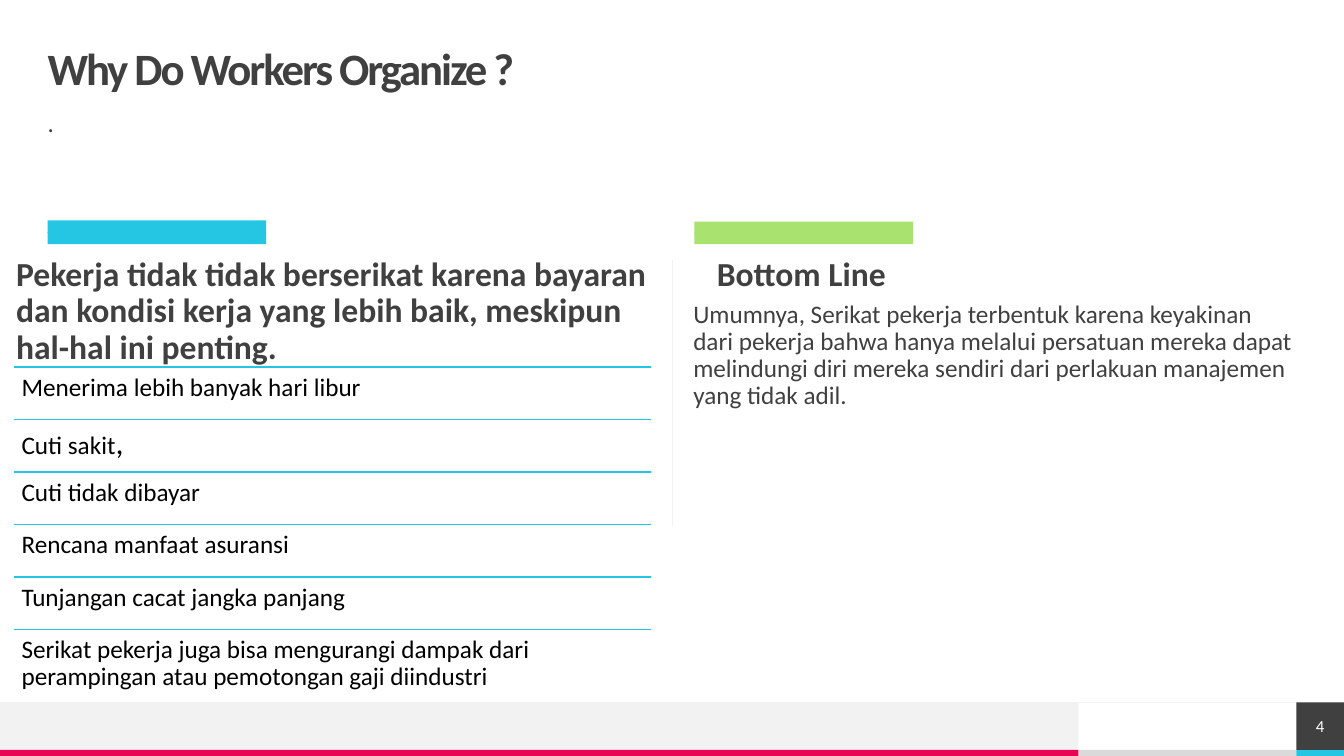
from dataclasses import dataclass

from lxml.etree import SubElement
from pptx import Presentation
from pptx.dml.color import RGBColor
from pptx.enum.shapes import MSO_CONNECTOR, MSO_SHAPE
from pptx.enum.text import MSO_ANCHOR, PP_ALIGN
from pptx.oxml.ns import qn
from pptx.util import Pt


@dataclass(frozen=True)
class Theme:
    font: str = "Calibri"
    cyan: str = "25C6E3"
    green: str = "A9E26F"
    magenta: str = "E80554"
    dark: str = "404040"
    pale: str = "F2F2F2"
    grey: str = "DADADA"
    black: str = "000000"
    white: str = "FFFFFF"
    title: float = 32
    heading: float = 24
    body: float = 18
    comma: float = 23
    small: float = 12


THEME = Theme()
SLIDE_WIDTH, SLIDE_HEIGHT = 960, 540
FOOTER_TOP, FOOTER_HEIGHT = 501.8, 33.9
STRIP_TOP, STRIP_HEIGHT = 535.7, 4.3
FOOTER_WIDTH, NUMBER_LEFT = 770.4, 926.1
BAR_WIDTH, BAR_HEIGHT = 156.2, 9
ROWS_LEFT, ROWS_TOP, ROWS_WIDTH, ROW_HEIGHT = 10.2, 262.2, 455, 37.5
ROW_MARGIN = 5.2
LINE_SPACING = 0.9

# Each row is a list of (text, size) parts.
BENEFITS = [
    [("Menerima lebih banyak hari libur", THEME.body)],
    [("Cuti sakit", THEME.body), (",", THEME.comma)],
    [("Cuti tidak dibayar", THEME.body)],
    [("Rencana manfaat asuransi", THEME.body)],
    [("Tunjangan cacat jangka panjang", THEME.body)],
    [("Serikat pekerja juga bisa mengurangi dampak dari perampingan atau "
      "pemotongan gaji diindustri", THEME.body)],
]


def add_block(slide, left, top, width, height, color):
    shape = slide.shapes.add_shape(
        MSO_SHAPE.RECTANGLE, Pt(left), Pt(top), Pt(width), Pt(height))
    shape.shadow.inherit = False
    shape.fill.solid()
    shape.fill.fore_color.rgb = RGBColor.from_string(color)
    shape.line.fill.background()
    return shape


def add_rule(slide, start, end, color, weight):
    line = slide.shapes.add_connector(
        MSO_CONNECTOR.STRAIGHT, Pt(start[0]), Pt(start[1]), Pt(end[0]), Pt(end[1]))
    line.line.color.rgb = RGBColor.from_string(color)
    line.line.width = Pt(weight)
    SubElement(line._element.spPr, qn("a:effectLst"))


def set_frame(text_frame, margin=0, anchor=MSO_ANCHOR.TOP):
    text_frame.word_wrap = True
    text_frame.vertical_anchor = anchor
    text_frame.margin_left = text_frame.margin_right = Pt(margin)
    text_frame.margin_top = text_frame.margin_bottom = Pt(margin)


def format_run(run, size, color, bold=False, tracking=0):
    """Set the font; tracking is the letter spacing in points."""
    run.font.name = THEME.font
    run.font.size = Pt(size)
    run.font.bold = bold
    run.font.color.rgb = RGBColor.from_string(color)
    if tracking:
        run._r.get_or_add_rPr().set("spc", str(round(tracking * 100)))


def add_text(slide, box, parts, color=THEME.dark, bold=False, tracking=0,
             margin=0, anchor=MSO_ANCHOR.TOP):
    """Add one paragraph made of (text, size) parts."""
    text_frame = slide.shapes.add_textbox(*map(Pt, box)).text_frame
    set_frame(text_frame, margin, anchor)
    paragraph = text_frame.paragraphs[0]
    paragraph.line_spacing = LINE_SPACING
    for text, size in parts:
        run = paragraph.add_run()
        run.text = text
        format_run(run, size, color, bold, tracking)


def add_footer(slide):
    add_block(slide, FOOTER_WIDTH, STRIP_TOP, NUMBER_LEFT - FOOTER_WIDTH,
              STRIP_HEIGHT, THEME.grey)
    add_block(slide, 0, FOOTER_TOP, FOOTER_WIDTH, FOOTER_HEIGHT, THEME.pale)
    add_block(slide, 0, STRIP_TOP, FOOTER_WIDTH, STRIP_HEIGHT, THEME.magenta)
    add_block(slide, NUMBER_LEFT, STRIP_TOP, SLIDE_WIDTH - NUMBER_LEFT,
              STRIP_HEIGHT, THEME.cyan)
    add_rule(slide, (SLIDE_WIDTH, FOOTER_TOP), (0, FOOTER_TOP), THEME.pale, 0.5)


def add_slide_number(slide, number):
    tile = add_block(slide, NUMBER_LEFT, FOOTER_TOP, SLIDE_WIDTH - NUMBER_LEFT,
                     FOOTER_HEIGHT, THEME.dark)
    set_frame(tile.text_frame, anchor=MSO_ANCHOR.MIDDLE)
    tile.text_frame.text = number
    paragraph = tile.text_frame.paragraphs[0]
    paragraph.alignment = PP_ALIGN.CENTER
    format_run(paragraph.runs[0], THEME.small, THEME.white)


def add_accent_bar(slide, left, top, color):
    """Add a bar of two overlapping blocks; the lower one has a fixed place."""
    for block_top in (165.4, top):
        add_block(slide, left, block_top, BAR_WIDTH, BAR_HEIGHT, color)


def add_benefits(slide):
    for index, parts in enumerate(BENEFITS):
        top = ROWS_TOP + index * ROW_HEIGHT
        add_rule(slide, (ROWS_LEFT, top), (ROWS_LEFT + ROWS_WIDTH, top),
                 THEME.cyan, 1)
        add_text(slide, (ROWS_LEFT, top, ROWS_WIDTH, ROW_HEIGHT), parts,
                 color=THEME.black, margin=ROW_MARGIN)


def main():
    presentation = Presentation()
    presentation.slide_width = Pt(SLIDE_WIDTH)
    presentation.slide_height = Pt(SLIDE_HEIGHT)
    slide = presentation.slides.add_slide(presentation.slide_layouts[6])

    add_footer(slide)
    add_text(slide, (34, 34, 892.8, 33.8),
             [("Why Do Workers Organize ?", THEME.title)],
             bold=True, tracking=-1.5, anchor=MSO_ANCHOR.MIDDLE)
    add_text(slide, (34, 79.2, 892.8, 28), [(".", THEME.body)])

    add_accent_bar(slide, 34, 157.5, THEME.cyan)
    add_text(slide, (11.5, 184, 460.8, 63.4),
             [("Pekerja tidak tidak berserikat karena bayaran dan kondisi kerja "
               "yang lebih baik, meskipun hal-hal ini penting.", THEME.heading)],
             bold=True)
    add_benefits(slide)

    add_rule(slide, (480, 185.8), (480, 375.8), THEME.pale, 0.5)
    add_accent_bar(slide, 496, 158.4, THEME.green)
    add_text(slide, (512, 184, 430.6, 28),
             [("Bottom Line", THEME.heading)], bold=True)
    add_text(slide, (495.2, 215.3, 430.6, 172.8),
             [("Umumnya, Serikat pekerja terbentuk karena keyakinan dari pekerja "
               "bahwa hanya melalui persatuan mereka dapat melindungi diri mereka "
               "sendiri dari perlakuan manajemen yang tidak adil.", THEME.body)])
    add_slide_number(slide, "4")

    presentation.save("out.pptx")


if __name__ == "__main__":
    main()
